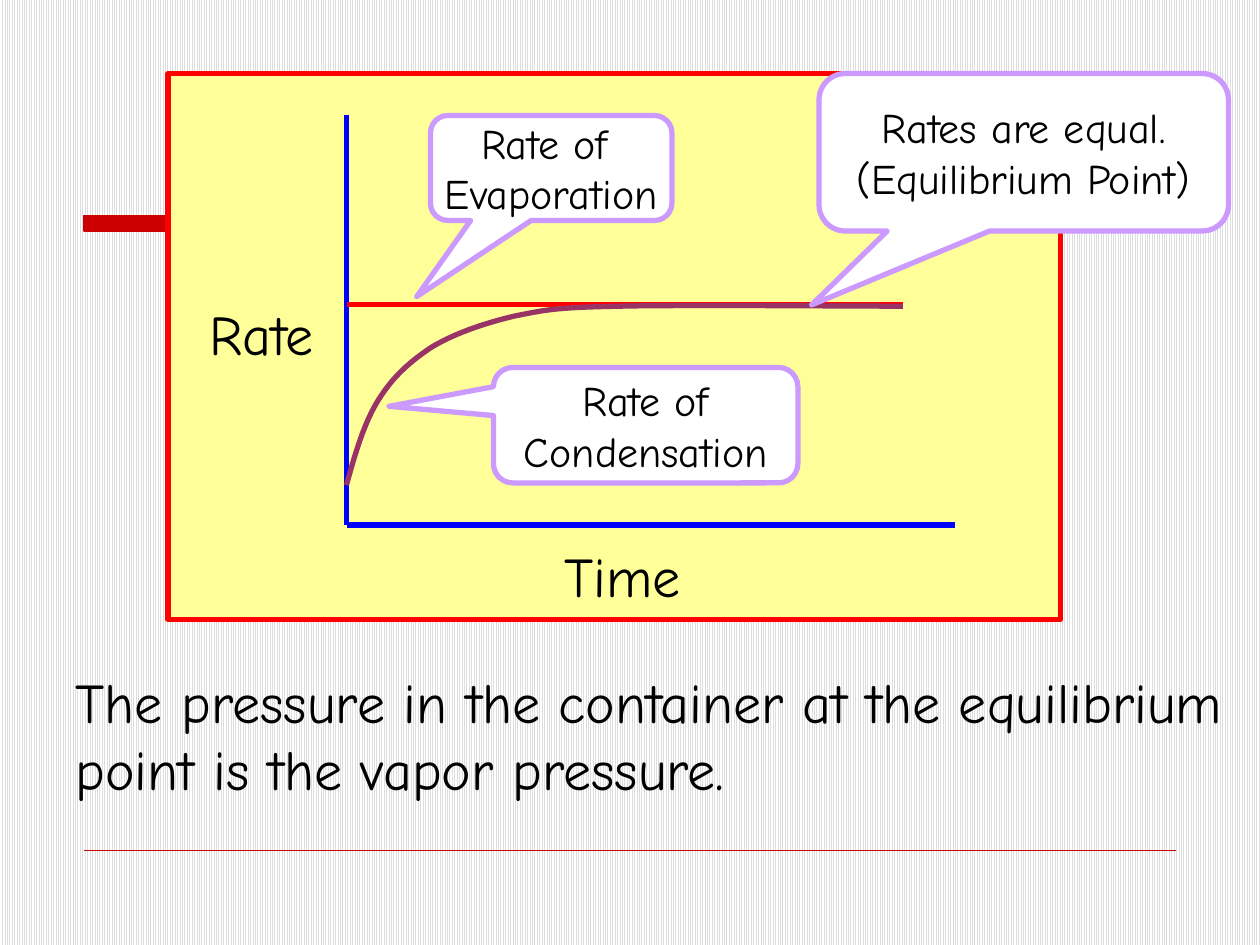
from dataclasses import dataclass

from lxml.etree import SubElement
from pptx import Presentation
from pptx.dml.color import RGBColor
from pptx.enum.dml import MSO_PATTERN
from pptx.enum.shapes import MSO_CONNECTOR, MSO_SHAPE
from pptx.enum.text import MSO_ANCHOR, MSO_AUTO_SIZE, PP_ALIGN
from pptx.oxml.ns import qn
from pptx.util import Pt

FONT = "Comic Neue"
COLORS = {
    "stripe": "DDDDDD", "white": "FFFFFF", "black": "000000",
    "accent": "CC0000", "panel": "FFFF99", "red": "FF0000",
    "axis": "0000FF", "condensation": "993366", "callout": "CC99FF",
}

Point = tuple[float, float]
Area = tuple[float, float, float, float]


@dataclass
class Rule:
    start: Point
    end: Point
    color: str
    width: float = 3


@dataclass
class Callout:
    area: Area
    pointer: tuple[float, float]
    text: str


@dataclass
class AxisLabel:
    area: Area
    text: str


ORIGIN = (198, 300)
MASTER_RULE = Rule((48, 486), (672, 486), "accent", 0.25)
GRAPH_LINES = [
    Rule((198, 66), ORIGIN, "axis"),
    Rule(ORIGIN, (546, 300), "axis"),
    Rule((198, 174), (516, 174), "red"),
]
LABELS = [
    AxisLabel((312, 306, 88, 45), "Time"),
    AxisLabel((108, 168, 83.5, 45), "Rate"),
]
CALLOUTS = [
    Callout((246, 66, 138, 60), (-0.557, 1.225), "Rate of \nEvaporation"),
    Callout((282, 210, 174, 66), (-0.843, -0.163), "Rate of\nCondensation"),
    Callout((468, 42, 234, 90), (-0.518, 0.969),
            "Rates are equal.\n(Equilibrium Point)"),
]
# Start point, then two control points and an end point per Bézier segment
CONDENSATION = [
    (198, 277.2),
    (203, 259.2), (208, 241.9), (216, 229),
    (224, 216), (233.3, 207.4), (246.2, 198.7),
    (259.2, 190.8), (275.8, 185), (293.8, 180.7),
    (311.8, 177.1), (316.8, 175.7), (354.2, 175),
    (391, 174.2), (488.9, 175), (516, 175),
]
STEPS = 12


def rgb(name: str) -> RGBColor:
    return RGBColor.from_string(COLORS[name])


def format_text(shape, size: float, align: PP_ALIGN, wrap: bool) -> None:
    frame = shape.text_frame
    frame.auto_size = MSO_AUTO_SIZE.NONE
    frame.word_wrap = wrap
    frame.vertical_anchor = MSO_ANCHOR.MIDDLE
    for para in frame.paragraphs:
        para.alignment = align
        for span in para.runs:
            span.font.name = FONT
            span.font.size = Pt(size)
            span.font.color.rgb = rgb("black")


def add_box(page, kind: MSO_SHAPE, area: Area, fill: str, line: str, width: float):
    box = page.shapes.add_shape(kind, *map(Pt, area))
    box.shadow.inherit = False
    box.fill.solid()
    box.fill.fore_color.rgb = rgb(fill)
    box.line.color.rgb = rgb(line)
    box.line.width = Pt(width)
    return box


def add_rule(page, rule: Rule) -> None:
    line = page.shapes.add_connector(
        MSO_CONNECTOR.STRAIGHT, *map(Pt, rule.start + rule.end))
    line.line.color.rgb = rgb(rule.color)
    line.line.width = Pt(rule.width)
    SubElement(line._element.spPr, qn("a:effectLst"))


def add_label(page, label: AxisLabel) -> None:
    box = page.shapes.add_textbox(*map(Pt, label.area))
    box.text_frame.text = label.text
    format_text(box, 32, PP_ALIGN.CENTER, False)


def add_callout(page, callout: Callout) -> None:
    box = add_box(page, MSO_SHAPE.ROUNDED_RECTANGULAR_CALLOUT, callout.area,
                  "white", "callout", 3)
    for index, value in enumerate(callout.pointer):
        box.adjustments[index] = value
    box.text_frame.text = callout.text
    format_text(box, 24, PP_ALIGN.CENTER, False)


def bezier(a: float, b: float, c: float, d: float, t: float) -> float:
    u = 1 - t
    return u**3 * a + 3 * u**2 * t * b + 3 * u * t**2 * c + t**3 * d


def add_curve(page, points: list[Point], color: str) -> None:
    builder = page.shapes.build_freeform(*map(Pt, points[0]))
    vertices = []
    for first in range(0, len(points) - 1, 3):
        xs, ys = zip(*points[first:first + 4])
        for step in range(1, STEPS + 1):
            t = step / STEPS
            vertices.append((Pt(bezier(*xs, t)), Pt(bezier(*ys, t))))
    builder.add_line_segments(vertices, close=False)
    curve = builder.convert_to_shape()
    curve.shadow.inherit = False
    curve.fill.background()
    curve.line.color.rgb = rgb(color)
    curve.line.width = Pt(3)


def add_statement(page, text: str) -> None:
    title = page.shapes.title
    title.left, title.top, title.width, title.height = map(Pt, (36, 378, 684, 84))
    title.text_frame.text = text
    format_text(title, 32, PP_ALIGN.LEFT, True)


def main() -> None:
    deck = Presentation()
    deck.slide_width, deck.slide_height = Pt(720), Pt(540)
    page = deck.slides.add_slide(deck.slide_layouts[5])

    # Striped background
    background = page.background.fill
    background.patterned()
    background.pattern = MSO_PATTERN.NARROW_VERTICAL
    background.fore_color.rgb = rgb("stripe")
    background.back_color.rgb = rgb("white")

    # Accent bar and footer rule
    add_box(page, MSO_SHAPE.RECTANGLE, (48, 123, 366.5, 9), "accent", "accent", 0.75)
    add_rule(page, MASTER_RULE)

    # Graph panel with axes, labels and rates
    add_box(page, MSO_SHAPE.RECTANGLE, (96, 42, 510, 312), "panel", "red", 3)
    for rule in GRAPH_LINES:
        add_rule(page, rule)
    for label in LABELS:
        add_label(page, label)
    add_curve(page, CONDENSATION, "condensation")

    # Explanations
    for callout in CALLOUTS:
        add_callout(page, callout)
    add_statement(page, "The pressure in the container at the equilibrium "
                        "point is the vapor pressure.")

    deck.save("out.pptx")


if __name__ == "__main__":
    main()
